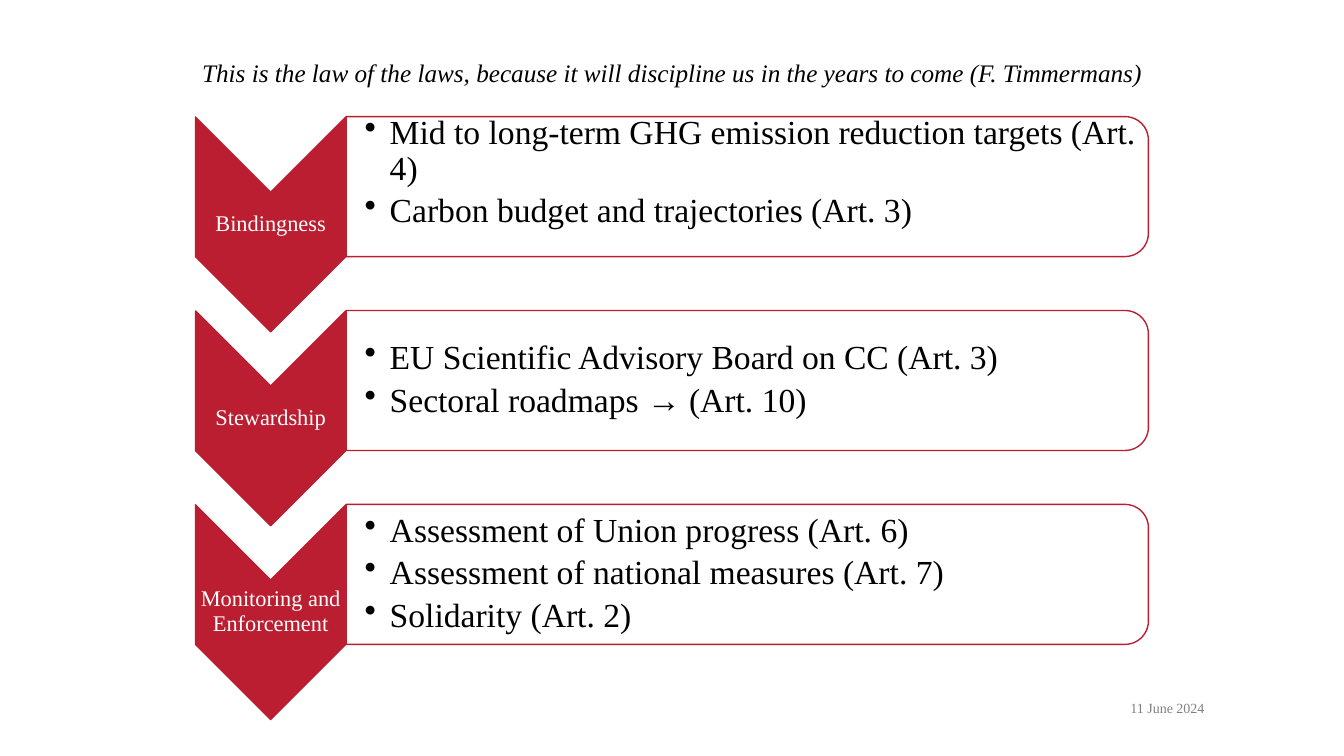
"""Build the climate law slide: three chevrons, each with a panel of articles."""
from dataclasses import dataclass

from lxml import etree
from pptx import Presentation
from pptx.dml.color import RGBColor
from pptx.enum import shapes, text
from pptx.oxml.ns import qn
from pptx.util import Pt


@dataclass(frozen=True)
class Theme:
    font: str = "Times New Roman"
    red: str = "BC1E31"
    white: str = "FFFFFF"
    black: str = "000000"
    grey: str = "808080"
    bullet_size: float = 24
    quote_size: float = 18
    label_size: float = 16
    date_size: float = 10


@dataclass(frozen=True)
class Frame:
    left: float
    top: float
    width: float
    height: float

    def lengths(self) -> list:
        return [Pt(value) for value in (self.left, self.top, self.width, self.height)]

    def moved(self, down: float) -> "Frame":
        return Frame(self.left, self.top + down, self.width, self.height)


@dataclass(frozen=True)
class Pillar:
    label: str
    points: tuple[str, ...]
    lift: float = 0


THEME = Theme()
ROW_PITCH = 138.5
INDENT = 18
CHEVRON = Frame(116.6, 106.6, 153.4, 107.4)
LABEL = Frame(139.6, 137, 107.4, 46)
PANEL = Frame(483.8, -153.2, 100, 573)
POINTS = Frame(247, 87.8, 568, 90)
PILLARS = (
    Pillar("Bindingness", (
        "Mid to long-term GHG emission reduction targets (Art. 4)",
        "Carbon budget and trajectories (Art. 3)",
    ), lift=9.5),
    Pillar("Stewardship", (
        "EU Scientific Advisory Board on CC (Art. 3)",
        "Sectoral roadmaps → (Art. 10)",
    )),
    Pillar("Monitoring and Enforcement", (
        "Assessment of Union progress (Art. 6)",
        "Assessment of national measures (Art. 7)",
        "Solidarity (Art. 2)",
    )),
)


def add_bullet(para) -> None:
    """Give a paragraph a hanging round bullet."""
    properties = para._p.get_or_add_pPr()
    properties.set("marL", str(Pt(INDENT)))
    properties.set("indent", str(-Pt(INDENT)))
    etree.SubElement(properties, qn("a:buChar")).set("char", "•")


def add_text(page, frame: Frame, lines: tuple[str, ...], *, size: float,
             color: str, align=text.PP_ALIGN.LEFT, anchor=text.MSO_ANCHOR.MIDDLE,
             margins: tuple[float, float, float, float] = (0, 0, 0, 0),
             italic: bool = False, bullets: bool = False,
             spacing: float = 1, after: float = 0) -> None:
    """Place a text box holding one paragraph per line."""
    body = page.shapes.add_textbox(*frame.lengths()).text_frame
    body.word_wrap = True
    body.vertical_anchor = anchor
    (body.margin_left, body.margin_top,
     body.margin_right, body.margin_bottom) = [Pt(value) for value in margins]
    for index, line in enumerate(lines):
        para = body.add_paragraph() if index else body.paragraphs[0]
        para.alignment = align
        para.line_spacing = spacing
        para.space_after = Pt(after)
        if bullets:
            add_bullet(para)
        span = para.add_run()
        span.text = line
        span.font.name = THEME.font
        span.font.size = Pt(size)
        span.font.italic = italic
        span.font.color.rgb = RGBColor.from_string(color)


def add_turned_shape(page, kind, frame: Frame, fill: str, opacity: int = 100) -> None:
    """Place a red-edged shape turned a quarter clockwise."""
    shape = page.shapes.add_shape(kind, *frame.lengths())
    shape.rotation = 90
    shape.shadow.inherit = False
    shape.fill.solid()
    shape.fill.fore_color.rgb = RGBColor.from_string(fill)
    shape.line.color.rgb = RGBColor.from_string(THEME.red)
    shape.line.width = Pt(1)
    if opacity < 100:
        color = shape._element.spPr.find(qn("a:solidFill"))[0]
        etree.SubElement(color, qn("a:alpha")).set("val", str(opacity * 1000))


def add_pillar(page, pillar: Pillar, down: float) -> None:
    """Place one chevron with its label and panel of points."""
    add_turned_shape(page, shapes.MSO_SHAPE.CHEVRON, CHEVRON.moved(down), THEME.red)
    add_text(page, LABEL.moved(down), (pillar.label,), size=THEME.label_size,
             color=THEME.white, align=text.PP_ALIGN.CENTER,
             margins=(0.8, 0.8, 0.8, 0.8), spacing=0.9)
    add_turned_shape(page, shapes.MSO_SHAPE.ROUND_2_SAME_RECTANGLE,
                     PANEL.moved(down), THEME.white, opacity=90)
    add_text(page, POINTS.moved(down - pillar.lift), pillar.points,
             size=THEME.bullet_size, color=THEME.black,
             margins=(13.4, 1.2, 1.2, 1.2), bullets=True, spacing=0.9, after=4.5)


def main() -> None:
    """Build and save the deck."""
    deck = Presentation()
    deck.slide_width, deck.slide_height = Pt(960), Pt(540)
    page = deck.slides.add_slide(deck.slide_layouts[6])
    add_text(page, Frame(763, 499.7, 97.2, 12.2), ("11 June 2024",),
             size=THEME.date_size, color=THEME.grey, align=text.PP_ALIGN.RIGHT)
    for row, pillar in enumerate(PILLARS):
        add_pillar(page, pillar, row * ROW_PITCH)
    add_text(page, Frame(123.1, 37.4, 714.2, 29),
             ("This is the law of the laws, because it will discipline us "
              "in the years to come (F. Timmermans)",),
             size=THEME.quote_size, color=THEME.black, italic=True,
             align=text.PP_ALIGN.CENTER, anchor=text.MSO_ANCHOR.TOP,
             margins=(7.2, 3.6, 7.2, 3.6))
    deck.save("out.pptx")


if __name__ == "__main__":
    main()
